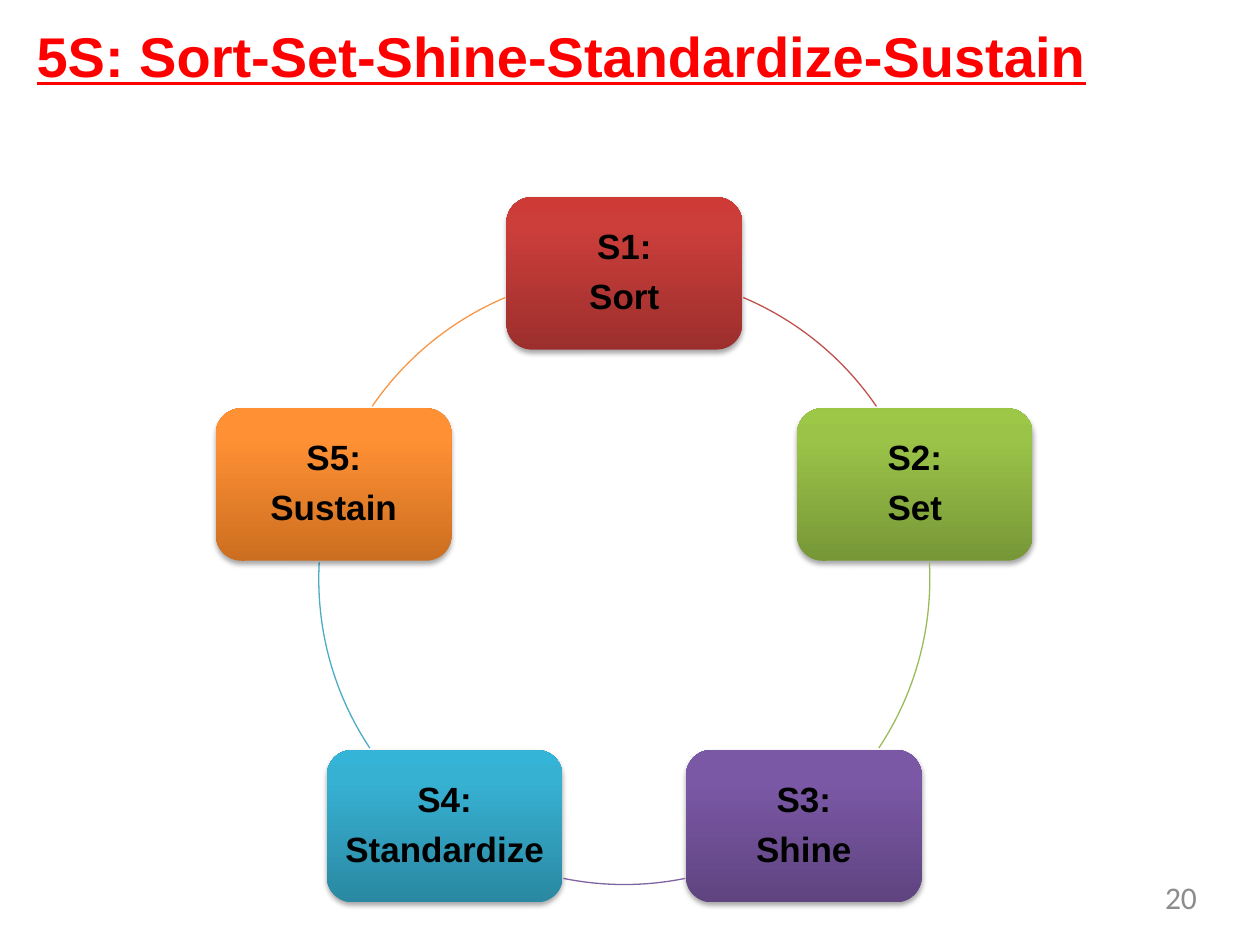
import copy
import math

import lxml.etree
import pptx
import pptx.dml.color
import pptx.enum.shapes
import pptx.enum.text
import pptx.oxml.ns
import pptx.util

WIDTH = pptx.util.Inches(10)
HEIGHT = pptx.util.Inches(7.5)
COLORS = {
    "title": "FF0000",
    "text": "000000",
    "number": "8C8C8C",
    "shadow": "000000",
}
STEPS = [
    ("S1:", "Sort", ("9C2F2D", "CB3E3A", "CE3B37"), "C0504D", (292.9, 325.6)),
    ("S2:", "Set", ("779737", "9BC348", "9DC746"), "9BBB59", (356.9, 33.6)),
    ("S3:", "Shine", ("5F4480", "7B58A6", "7C57A8"), "8064A2", (78.5, 101.5)),
    ("S4:", "Standardize", ("2A88A2", "37B1D2", "34B4D6"), "4BACC6", (146.4, 183.1)),
    ("S5:", "Sustain", ("CC6E20", "FF9034", "FF9136"), "F79646", (214.4, 247.1)),
]
STOP_POSITIONS = (0, 0.8, 1)


def rgb(value):
    return pptx.dml.color.RGBColor.from_string(value)


def inches(*values):
    return [pptx.util.Inches(value) for value in values]


def format_text(text_frame, name, size, color, align, bold=False, underline=False):
    for paragraph in text_frame.paragraphs:
        paragraph.alignment = align
        for run in paragraph.runs:
            run.font.name = name
            run.font.size = pptx.util.Pt(size)
            run.font.color.rgb = rgb(color)
            run.font.bold = bold
            run.font.underline = underline


def set_margins(text_frame, margin):
    text_frame.margin_left = text_frame.margin_right = margin
    text_frame.margin_top = text_frame.margin_bottom = margin


def add_title(slide, box):
    title = slide.shapes.title
    title.left, title.top, title.width, title.height = box
    text_frame = title.text_frame
    text_frame.text = "5S: Sort-Set-Shine-Standardize-Sustain"
    text_frame.vertical_anchor = pptx.enum.text.MSO_ANCHOR.TOP
    text_frame.auto_size = pptx.enum.text.MSO_AUTO_SIZE.NONE
    set_margins(text_frame, 0)
    format_text(text_frame, "Arial", 32, COLORS["title"],
                pptx.enum.text.PP_ALIGN.LEFT, bold=True, underline=True)


def add_slide_number(slide, box):
    text_frame = slide.shapes.add_textbox(*box).text_frame
    text_frame.word_wrap = True
    text_frame.text = "20"
    set_margins(text_frame, 0)
    format_text(text_frame, "Calibri", 18, COLORS["number"], pptx.enum.text.PP_ALIGN.RIGHT)


def fill_gradient(shape, colors):
    shape.fill.gradient()
    shape.fill.gradient_angle = 90
    stop_list = shape.element.spPr.find(".//" + pptx.oxml.ns.qn("a:gsLst"))
    stop_list.append(copy.deepcopy(stop_list[-1]))
    for stop, color, position in zip(shape.fill.gradient_stops, colors, STOP_POSITIONS):
        stop.color.rgb = rgb(color)
        stop.position = position


def add_shadow(shape):
    shape.shadow.inherit = False
    qn = pptx.oxml.ns.qn
    effects = shape.element.spPr.find(qn("a:effectLst"))
    shadow = lxml.etree.SubElement(
        effects, qn("a:outerShdw"), blurRad=str(pptx.util.Pt(3.1)),
        dist=str(pptx.util.Pt(1.8)), dir="5400000", rotWithShape="0")
    color = lxml.etree.SubElement(shadow, qn("a:srgbClr"), val=COLORS["shadow"])
    lxml.etree.SubElement(color, qn("a:alpha"), val="35000")


def add_step(slide, box, lines, colors):
    shape = slide.shapes.add_shape(
        pptx.enum.shapes.MSO_SHAPE.ROUNDED_RECTANGLE, *box)
    fill_gradient(shape, colors)
    shape.line.fill.background()
    add_shadow(shape)
    text_frame = shape.text_frame
    text_frame.text = "\n".join(lines)
    text_frame.word_wrap = True
    text_frame.vertical_anchor = pptx.enum.text.MSO_ANCHOR.MIDDLE
    set_margins(text_frame, pptx.util.Inches(0.05))
    for paragraph in text_frame.paragraphs:
        paragraph.line_spacing = 0.9
        paragraph.space_after = pptx.util.Pt(7)
    format_text(text_frame, "Arial", 20, COLORS["text"],
                pptx.enum.text.PP_ALIGN.CENTER, bold=True)


def add_arc(slide, box, angles, color):
    arc = slide.shapes.add_shape(pptx.enum.shapes.MSO_SHAPE.ARC, *box)
    for index, angle in enumerate(angles):
        arc.adjustments[index] = angle * 0.6
    arc.fill.background()
    arc.line.color.rgb = rgb(color)
    arc.line.width = pptx.util.Pt(0.75)
    arc.shadow.inherit = False


def add_cycle(slide, box):
    left, top, width, height = box
    radius = width / 2
    step_width, step_height = inches(1.87, 1.21)
    for index, (label, name, colors, line_color, angles) in enumerate(STEPS):
        turn = math.tau * index / len(STEPS)
        step_left = left + radius * (1 + math.sin(turn)) - step_width / 2
        step_top = top + radius * (1 - math.cos(turn)) - step_height / 2
        add_step(slide, (int(step_left), int(step_top), step_width, step_height),
                 (label, name), colors)
        add_arc(slide, box, angles, line_color)


def main():
    presentation = pptx.Presentation()
    presentation.slide_width = WIDTH
    presentation.slide_height = HEIGHT
    slide = presentation.slides.add_slide(presentation.slide_layouts[5])
    add_title(slide, inches(0.29, 0.17, 9.38, 0.92))
    add_slide_number(slide, inches(7.2, 6.97, 2.3, 0.38))
    add_cycle(slide, inches(2.53, 2.17, 4.85, 4.85))
    presentation.save("out.pptx")


if __name__ == "__main__":
    main()
